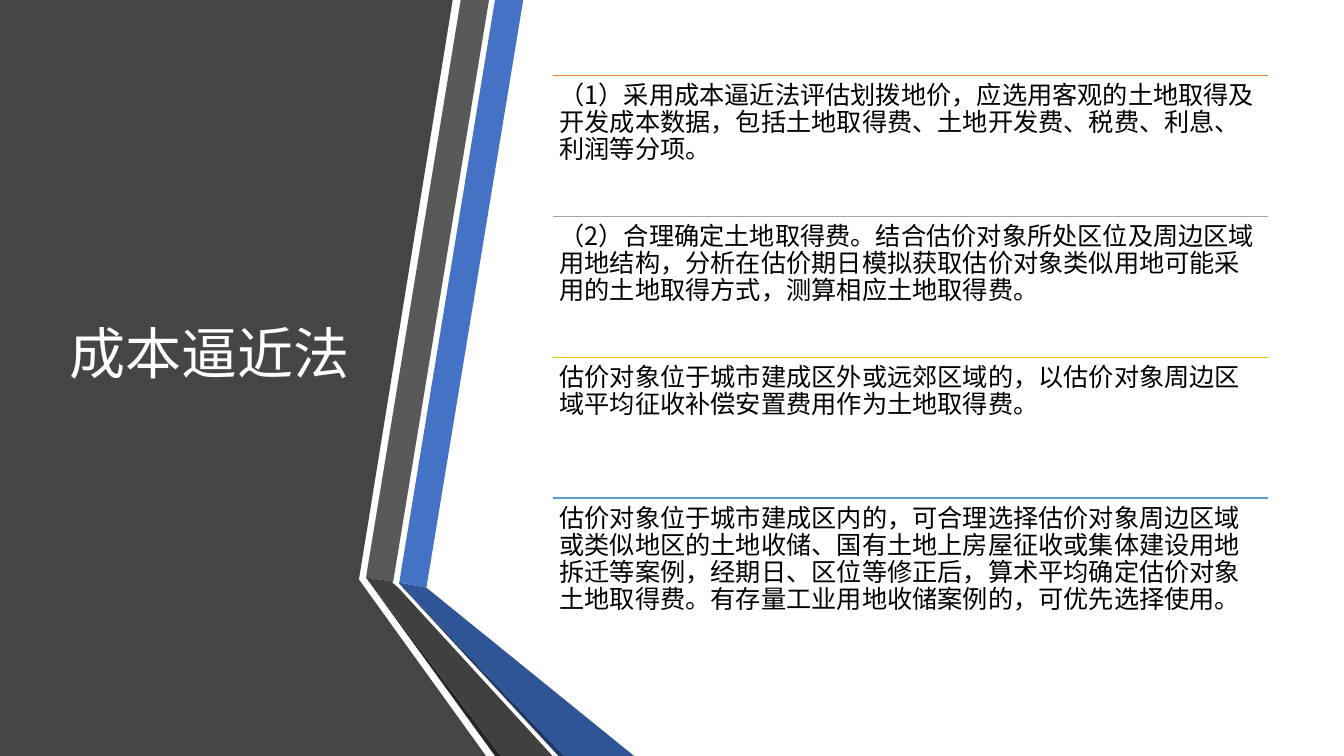
from dataclasses import dataclass

from lxml.etree import SubElement
from pptx import Presentation
from pptx.dml.color import RGBColor
from pptx.enum.shapes import MSO_CONNECTOR
from pptx.enum.text import MSO_ANCHOR, MSO_AUTO_SIZE, PP_ALIGN
from pptx.oxml.ns import qn
from pptx.slide import Slide
from pptx.text.text import TextFrame
from pptx.util import Inches, Pt


@dataclass(frozen=True)
class Theme:
    font: str = "Noto Sans CJK SC"
    title_size: int = 40
    body_size: int = 18
    rule_width: int = 1
    white: str = "FFFFFF"
    black: str = "000000"
    panel: str = "454545"
    blue: str = "4472C4"
    blue_dark: str = "2F5597"
    blue_deep: str = "203864"
    grey: str = "595959"
    grey_dark: str = "404040"
    grey_deep: str = "262626"
    orange: str = "ED7D31"
    silver: str = "A5A5A5"
    gold: str = "FFC000"
    sky: str = "5B9BD5"


@dataclass(frozen=True)
class Band:
    color: str
    points: tuple[tuple[float, float], ...]


@dataclass(frozen=True)
class Item:
    rule_color: str
    text: str


THEME = Theme()
WIDTH, HEIGHT = 13.33, 7.5
ITEM_LEFT, ITEM_TOP, ITEM_WIDTH, ITEM_HEIGHT = 5.48, 0.75, 7.1, 1.4
ITEM_STEP = 5.59 / 4
ITEM_INSET = 0.07

BANDS = [
    Band(THEME.panel, ((0, 0), (4.49, 0), (3.56, 5.75), (4.82, HEIGHT), (0, HEIGHT))),
    Band(THEME.blue, ((3.96, 5.78), (4.23, 5.83), (5.19, 0), (4.91, 0))),
    Band(THEME.grey, ((4.85, 0), (4.57, 0), (3.63, 5.73), (3.9, 5.77))),
    Band(THEME.grey_deep, ((3.63, 5.73), (4.91, HEIGHT), (4.97, HEIGHT))),
    Band(THEME.blue_deep, ((3.96, 5.79), (5.54, HEIGHT), (5.6, HEIGHT))),
    Band(THEME.blue_dark, ((3.96, 5.79), (5.6, HEIGHT), (6.29, HEIGHT), (4.23, 5.83), (3.96, 5.78))),
    Band(THEME.grey_dark, ((5.48, HEIGHT), (3.95, 5.83), (3.89, 5.78), (3.9, 5.77),
                           (3.63, 5.73), (4.97, HEIGHT))),
]

ITEMS = [
    Item(THEME.orange, "（1）采用成本逼近法评估划拨地价，应选用客观的土地取得及开发成本数据，"
                       "包括土地取得费、土地开发费、税费、利息、利润等分项。"),
    Item(THEME.silver, "（2）合理确定土地取得费。结合估价对象所处区位及周边区域用地结构，"
                       "分析在估价期日模拟获取估价对象类似用地可能采用的土地取得方式，测算相应土地取得费。"),
    Item(THEME.gold, "估价对象位于城市建成区外或远郊区域的，"
                     "以估价对象周边区域平均征收补偿安置费用作为土地取得费。"),
    Item(THEME.sky, "估价对象位于城市建成区内的，可合理选择估价对象周边区域或类似地区的土地收储、"
                    "国有土地上房屋征收或集体建设用地拆迁等案例，经期日、区位等修正后，"
                    "算术平均确定估价对象土地取得费。有存量工业用地收储案例的，可优先选择使用。"),
]


def write_text(tf: TextFrame, text: str, size: int, color: str, frame_format: dict) -> None:
    frame_format = {"word_wrap": True, "auto_size": MSO_AUTO_SIZE.NONE, **frame_format}
    for name, value in frame_format.items():
        setattr(tf, name, value)
    p = tf.paragraphs[0]
    for name, value in {"alignment": PP_ALIGN.LEFT, "line_spacing": 0.9}.items():
        setattr(p, name, value)
    r = p.add_run()
    r.text = text
    for name, value in {"name": THEME.font, "size": Pt(size), "bold": False}.items():
        setattr(r.font, name, value)
    r.font.color.rgb = RGBColor.from_string(color)
    # The East Asian typeface has no public setter.
    SubElement(r.font._element, qn("a:ea"), typeface=THEME.font)


def draw_band(s: Slide, band: Band) -> None:
    start, *rest = [(Inches(x), Inches(y)) for x, y in band.points]
    builder = s.shapes.build_freeform(*start)
    builder.add_line_segments(rest, close=True)
    sp = builder.convert_to_shape()
    sp.shadow.inherit = False
    sp.fill.solid()
    sp.fill.fore_color.rgb = RGBColor.from_string(band.color)
    sp.line.fill.background()


def draw_title(s: Slide, text: str) -> None:
    """Place the title in front of the dark panel."""
    title = s.shapes.title
    title.element.getparent().append(title.element)
    box = {"left": 0.59, "top": 0.75, "width": 3.04, "height": 5.58}
    for name, value in box.items():
        setattr(title, name, Inches(value))
    write_text(title.text_frame, text, THEME.title_size, THEME.white,
               {"vertical_anchor": MSO_ANCHOR.MIDDLE})


def draw_item(s: Slide, item: Item, top: float) -> None:
    """Draw one paragraph under its coloured rule."""
    left, right, y = Inches(ITEM_LEFT), Inches(ITEM_LEFT + ITEM_WIDTH), Inches(top)
    rule = s.shapes.add_connector(MSO_CONNECTOR.STRAIGHT, left, y, right, y)
    rule.line.color.rgb = RGBColor.from_string(item.rule_color)
    rule.line.width = Pt(THEME.rule_width)
    SubElement(rule.element.spPr, qn("a:effectLst"))

    box = s.shapes.add_textbox(left, y, Inches(ITEM_WIDTH), Inches(ITEM_HEIGHT))
    insets = {f"margin_{side}": Inches(ITEM_INSET) for side in ("left", "top", "right", "bottom")}
    write_text(box.text_frame, item.text, THEME.body_size, THEME.black,
               {"vertical_anchor": MSO_ANCHOR.TOP, **insets})


def main() -> None:
    prs = Presentation()
    prs.slide_width, prs.slide_height = Inches(WIDTH), Inches(HEIGHT)
    s = prs.slides.add_slide(prs.slide_layouts.get_by_name("Title Only"))
    for band in BANDS:
        draw_band(s, band)
    draw_title(s, "成本逼近法")
    for i, item in enumerate(ITEMS):
        draw_item(s, item, ITEM_TOP + i * ITEM_STEP)
    prs.save("out.pptx")


if __name__ == "__main__":
    main()
